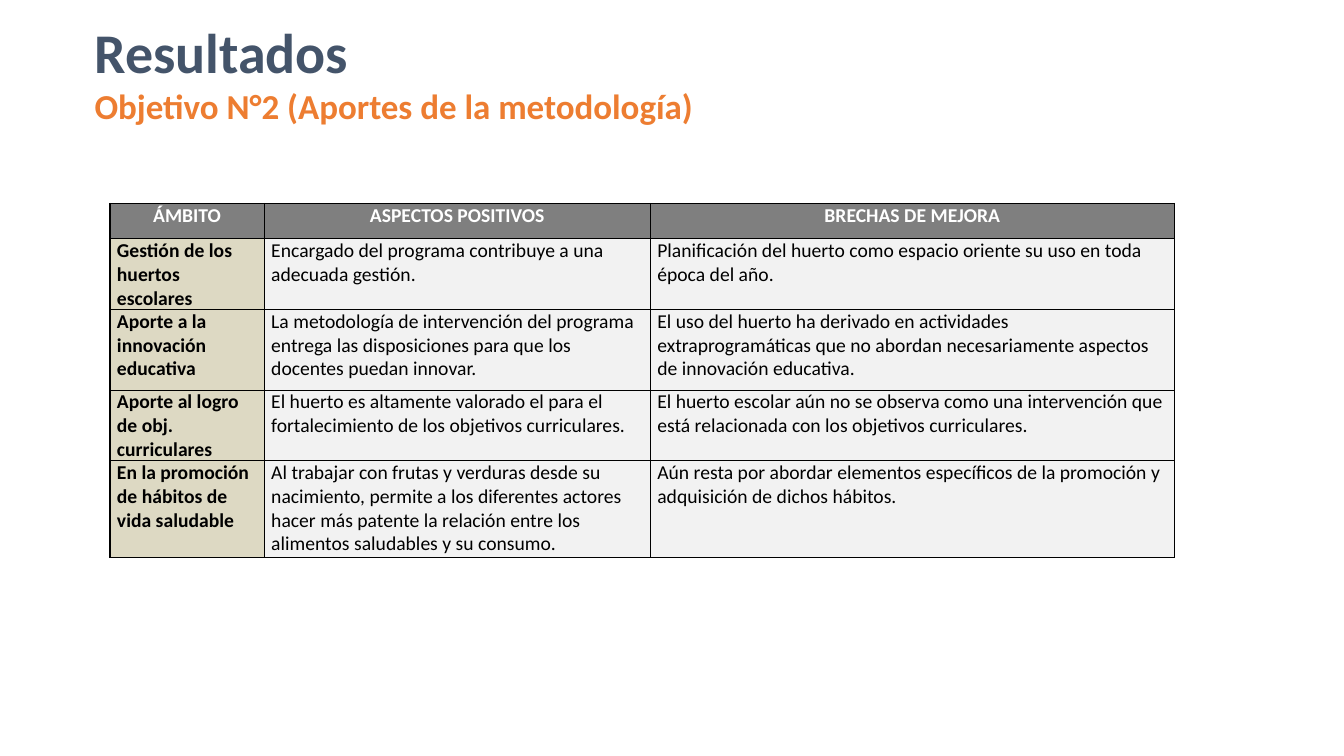
from dataclasses import dataclass

from lxml.etree import SubElement
from pptx import Presentation
from pptx.dml.color import RGBColor
from pptx.enum.text import MSO_ANCHOR, PP_ALIGN
from pptx.oxml.ns import qn
from pptx.util import Inches, Pt


@dataclass(frozen=True)
class Theme:
    font: str = "Calibri"
    title_size: int = 40
    subtitle_size: int = 25
    table_size: int = 14
    title: str = "44546A"
    subtitle: str = "ED7D31"
    header_fill: str = "7F7F7F"
    header_text: str = "FFFFFF"
    scope_fill: str = "DDD9C3"
    body_fill: str = "F2F2F2"
    body_text: str = "000000"
    border: str = "000000"


THEME = Theme()
WIDTH, HEIGHT = Inches(13.33), Inches(7.5)

# Table sizes in percent of the slide's width and height
COLUMNS = [11.48, 28.73, 39]
ROWS = [4.67, 8.53, 10.67, 8.53, 12.8]
CELLS = [
    ["ÁMBITO", "ASPECTOS POSITIVOS", "BRECHAS DE MEJORA"],
    ["Gestión de los huertos escolares",
     "Encargado del programa contribuye a una adecuada gestión.",
     "Planificación del huerto como espacio oriente su uso en toda época del año."],
    ["Aporte a la innovación educativa",
     "La metodología de intervención del programa entrega las disposiciones "
     "para que los docentes puedan innovar.",
     "El uso del huerto ha derivado en actividades extraprogramáticas que no "
     "abordan necesariamente aspectos de innovación educativa."],
    ["Aporte al logro de obj. curriculares",
     "El huerto es altamente valorado el para el fortalecimiento de los "
     "objetivos curriculares.",
     "El huerto escolar aún no se observa como una intervención que está "
     "relacionada con los objetivos curriculares."],
    ["En la promoción de hábitos de vida saludable",
     "Al trabajar con frutas y verduras desde su nacimiento, permite a los "
     "diferentes actores hacer más patente la relación entre los alimentos "
     "saludables y su consumo.",
     "Aún resta por abordar elementos específicos de la promoción y "
     "adquisición de dichos hábitos."],
]


def across(percent):
    return int(WIDTH * percent / 100)


def down(percent):
    return int(HEIGHT * percent / 100)


def write(p, text, size, color, bold=False, align=PP_ALIGN.LEFT):
    p.alignment = align
    r = p.add_run()
    r.text = text
    r.font.name = THEME.font
    r.font.size = Pt(size)
    r.font.bold = bold
    r.font.color.rgb = RGBColor.from_string(color)


def add_heading(slide, title, subtitle):
    sp = slide.shapes.add_textbox(across(6.3), down(1.6), across(87.1), down(15.87))
    tf = sp.text_frame
    tf.word_wrap = True
    tf.vertical_anchor = MSO_ANCHOR.MIDDLE
    write(tf.paragraphs[0], title, THEME.title_size, THEME.title, bold=True)
    write(tf.add_paragraph(), subtitle, THEME.subtitle_size, THEME.subtitle, bold=True)


def add_borders(cell):
    tc_pr = cell._tc.get_or_add_tcPr()
    for side in ("a:lnL", "a:lnR", "a:lnT", "a:lnB"):
        ln = SubElement(tc_pr, qn(side), w=str(Pt(1)))
        fill = SubElement(ln, qn("a:solidFill"))
        SubElement(fill, qn("a:srgbClr"), val=THEME.border)


def format_cell(cell, text, fill, **text_format):
    add_borders(cell)
    cell.fill.solid()
    cell.fill.fore_color.rgb = RGBColor.from_string(fill)
    cell.margin_left = cell.margin_right = Inches(0.07)
    cell.margin_top = cell.margin_bottom = 0
    write(cell.text_frame.paragraphs[0], text, THEME.table_size, **text_format)


def add_results_table(slide):
    table = slide.shapes.add_table(
        len(ROWS), len(COLUMNS), across(8.18), down(26.93),
        across(sum(COLUMNS)), down(sum(ROWS))).table
    for column, share in zip(table.columns, COLUMNS):
        column.width = across(share)
    for row, share in zip(table.rows, ROWS):
        row.height = down(share)

    for i, texts in enumerate(CELLS):
        for j, text in enumerate(texts):
            cell = table.cell(i, j)
            if i == 0:
                format_cell(cell, text, THEME.header_fill, color=THEME.header_text,
                            bold=True, align=PP_ALIGN.CENTER)
            else:
                fill = THEME.scope_fill if j == 0 else THEME.body_fill
                format_cell(cell, text, fill, color=THEME.body_text, bold=j == 0)


def main():
    prs = Presentation()
    prs.slide_width, prs.slide_height = WIDTH, HEIGHT
    slide = prs.slides.add_slide(prs.slide_layouts[6])

    # Heading
    add_heading(slide, "Resultados", "Objetivo N°2 (Aportes de la metodología)")

    # Strengths and gaps by scope
    add_results_table(slide)

    prs.save("out.pptx")


if __name__ == "__main__":
    main()
